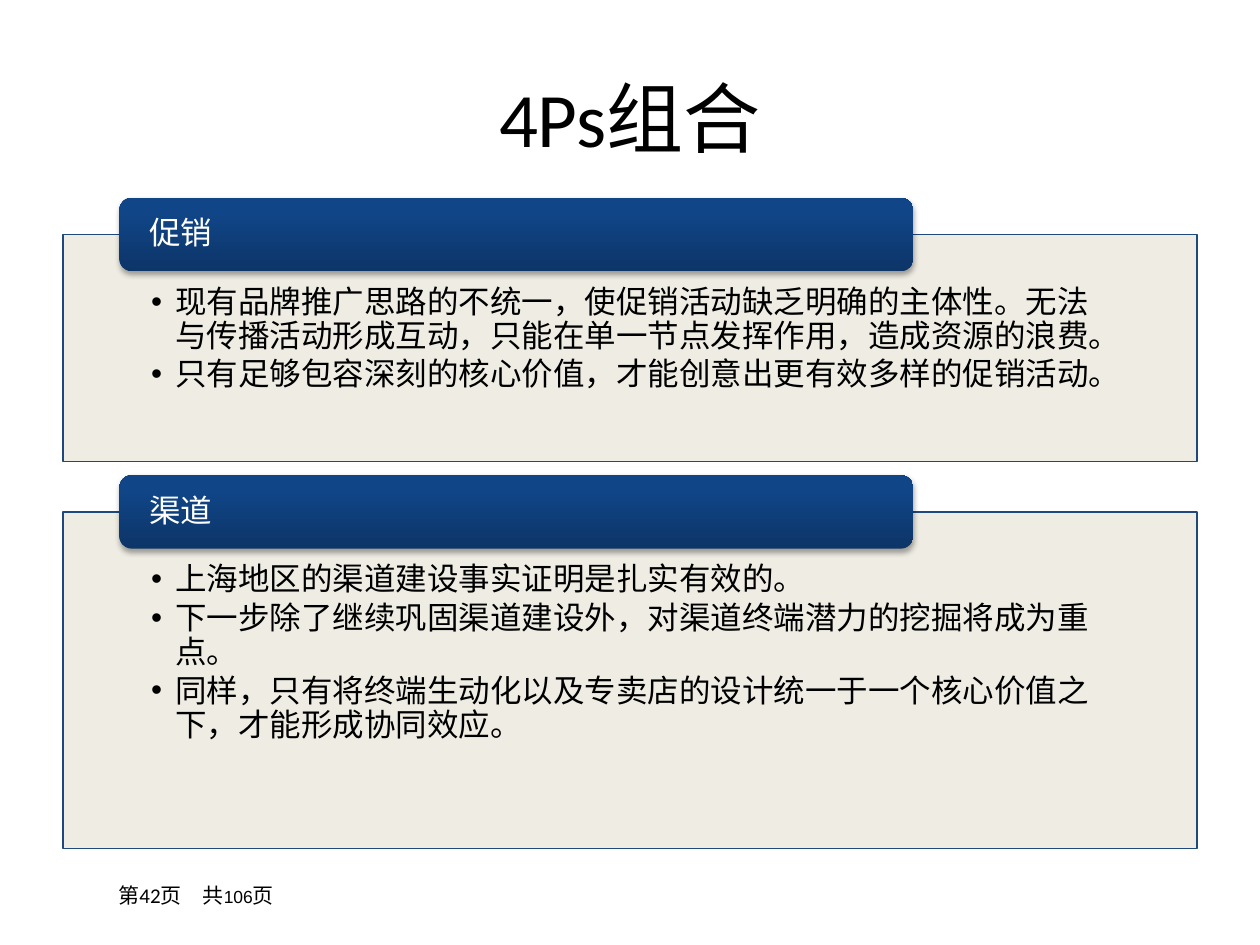
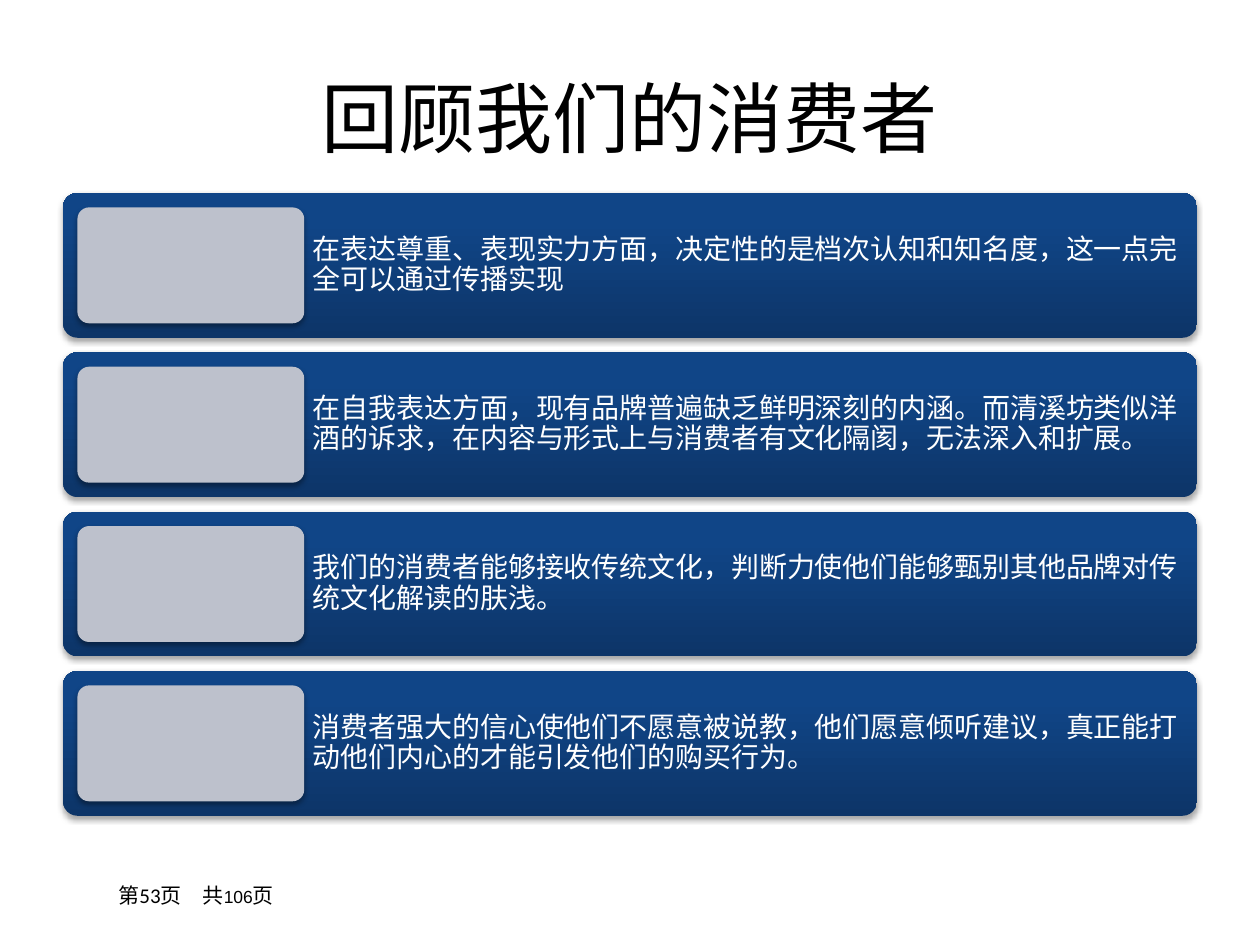
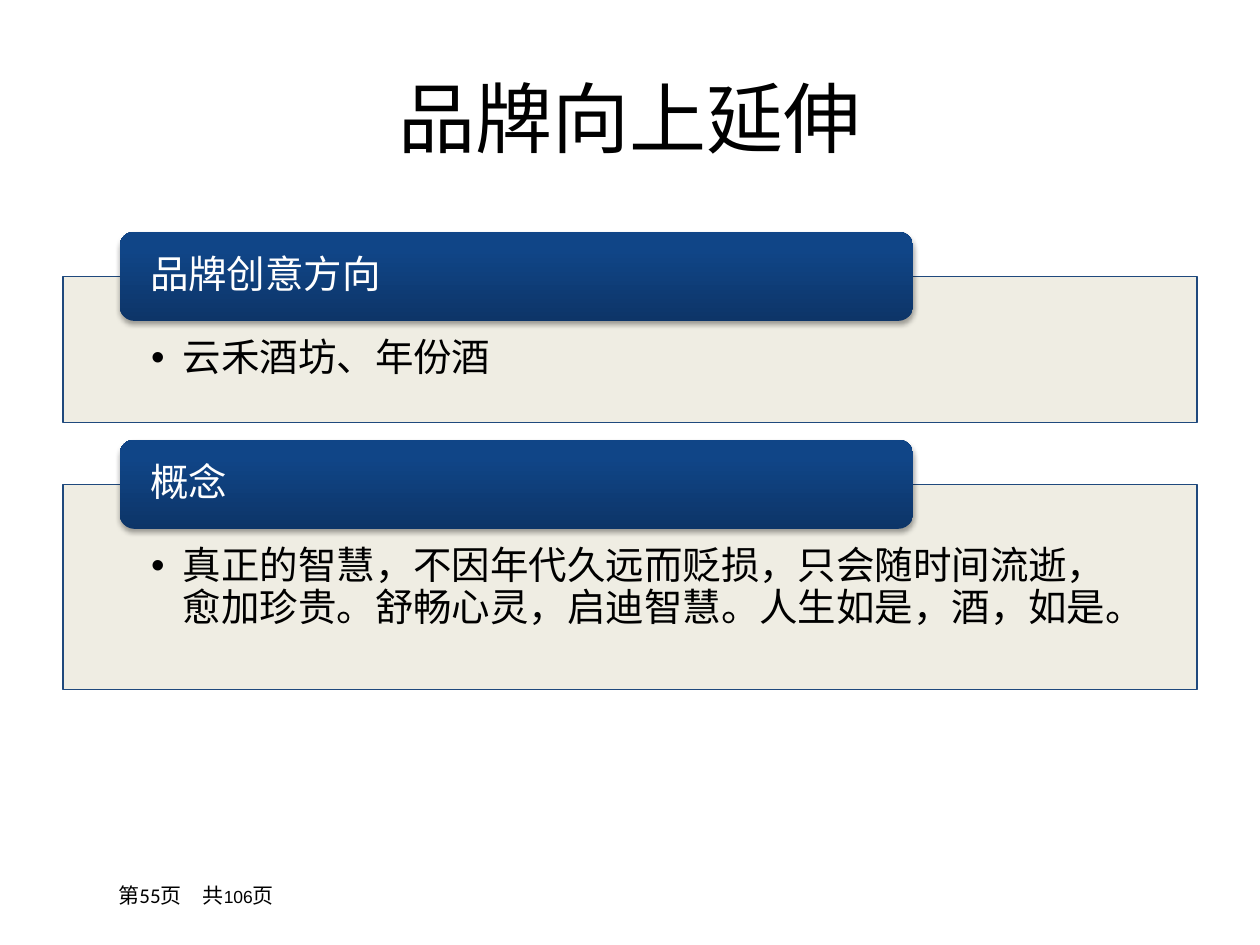
from lxml import etree
from copy import deepcopy
from pptx import Presentation
from pptx.dml.color import RGBColor
from pptx.enum.shapes import MSO_SHAPE
from pptx.enum.text import MSO_ANCHOR, PP_ALIGN
from pptx.oxml.ns import qn
from pptx.util import Cm, Pt

RECT, ROUNDED = MSO_SHAPE.RECTANGLE, MSO_SHAPE.ROUNDED_RECTANGLE
TOP, MIDDLE = MSO_ANCHOR.TOP, MSO_ANCHOR.MIDDLE
LEFT, CENTER, RIGHT = PP_ALIGN.LEFT, PP_ALIGN.CENTER, PP_ALIGN.RIGHT

# Colours
BLACK = RGBColor(0x00, 0x00, 0x00)
WHITE = RGBColor(0xFF, 0xFF, 0xFF)
CREAM = RGBColor(0xEE, 0xEC, 0xE1)
NAVY = RGBColor(0x1F, 0x49, 0x7D)
SILVER = RGBColor(0xBD, 0xC1, 0xCC)
BLUE_STOPS = [
    (0, RGBColor(0x0D, 0x35, 0x68)),
    (0.8, RGBColor(0x10, 0x45, 0x87)),
    (1, RGBColor(0x0E, 0x45, 0x8A)),
]

# Shared measures in centimetres
MARGIN, CONTENT_WIDTH = 1.27, 22.86
TOTAL_PAGES = 106


def add_xml(parent, tag, **attributes):
    """Append a DrawingML element that has no public method."""
    element = etree.SubElement(parent, qn(tag))
    for name, value in attributes.items():
        element.set(name, str(value))
    return element


class SlideBuilder:
    """Holds the deck, its style and the current slide."""

    def __init__(self):
        self.deck = Presentation()
        self.deck.slide_width, self.deck.slide_height = Cm(25.4), Cm(19.05)
        self.page = None

    def start_page(self, title, number):
        self.page = self.deck.slides.add_slide(self.deck.slide_layouts[5])
        box = self.page.shapes.title
        place = {"left": MARGIN, "top": 0.76, "width": CONTENT_WIDTH, "height": 3.18}
        for name, value in place.items():
            setattr(box, name, Cm(value))
        self.frame(box, MIDDLE)
        self.add_span(box.text_frame.paragraphs[0], title, 44, BLACK, CENTER)
        self.footer(number)

    def footer(self, number):
        box = self.page.shapes.add_textbox(Cm(0.99), Cm(17.65), Cm(4.78), Cm(0.79))
        self.frame(box, MIDDLE)
        para = box.text_frame.paragraphs[0]
        self.add_span(para, f"第{number}页　共", 12, BLACK, RIGHT)
        self.add_span(para, str(TOTAL_PAGES), 10, BLACK, RIGHT, "Arial")
        self.add_span(para, "页", 12, BLACK, RIGHT)

    def frame(self, box, anchor, **margins):
        box.text_frame.word_wrap = True
        box.text_frame.vertical_anchor = anchor
        for side, value in margins.items():
            setattr(box.text_frame, f"margin_{side}", Cm(value))

    def add_span(self, para, text, size, color, align=LEFT, font="Calibri"):
        para.alignment = align
        span = para.add_run()
        span.text = text
        for name, value in {"name": font, "size": Pt(size)}.items():
            setattr(span.font, name, value)
        span.font.color.rgb = color

    def shape(self, kind, left, top, width, height):
        shape = self.page.shapes.add_shape(kind, Cm(left), Cm(top), Cm(width), Cm(height))
        shape.shadow.inherit = False
        return shape

    def card(self, left, top, width, height, color=None, corner=None):
        """Rounded shadowed box, with the blue gradient unless a colour is given."""
        card = self.shape(ROUNDED, left, top, width, height)
        card.line.fill.background()
        if corner:
            card.adjustments[0] = corner
        if color:
            card.fill.solid()
            card.fill.fore_color.rgb = color
        else:
            self.blue_gradient(card)
        effects = card._element.spPr.find(qn("a:effectLst"))
        shadow = add_xml(effects, "a:outerShdw", blurRad=Pt(3.1), dist=Pt(1.8),
                         dir=5400000, rotWithShape=0)
        shade = add_xml(shadow, "a:srgbClr", val=BLACK)
        add_xml(shade, "a:alpha", val=35000)
        return card

    def blue_gradient(self, card):
        card.fill.gradient()
        card.fill.gradient_angle = 90
        stop_list = card._element.spPr.find(".//" + qn("a:gsLst"))
        stop_list.append(deepcopy(stop_list[-1]))
        for stop, (position, color) in zip(card.fill.gradient_stops, BLUE_STOPS):
            stop.position = position
            stop.color.rgb = color

    def bullet(self, para, text, size, indent):
        properties = para._p.get_or_add_pPr()
        properties.set("marL", str(Cm(indent)))
        properties.set("indent", str(-Cm(indent)))
        add_xml(properties, "a:buFont", typeface="Arial")
        add_xml(properties, "a:buChar", char="•")
        formats = {"line_spacing": 0.9, "space_after": Pt(size * 0.15)}
        for name, value in formats.items():
            setattr(para, name, value)
        self.add_span(para, text, size, BLACK)

    def panel(self, top, height, tab_height, items, size, indent):
        panel = self.shape(RECT, MARGIN, top, CONTENT_WIDTH, height)
        panel.fill.solid()
        panel.fill.fore_color.rgb = CREAM
        add_xml(panel._element.spPr.find(".//" + qn("a:srgbClr")), "a:alpha", val=90000)
        panel.line.color.rgb = NAVY
        panel.line.width = Pt(0.75)
        self.frame(panel, TOP, left=1.78, right=1.78,
                   top=tab_height * 0.7, bottom=tab_height * 0.24)
        for index, item in enumerate(items):
            frame = panel.text_frame
            para = frame.add_paragraph() if index else frame.paragraphs[0]
            self.bullet(para, item, size, indent)

    def tabbed_panels(self, top, tab_height, size, indent, sections):
        """Stack panels, each with a tab centred on its upper edge."""
        for heading, height, items in sections:
            panel_top = top + tab_height / 2
            self.panel(panel_top, height, tab_height, items, size, indent)
            tab = self.card(2.41, top, 16, tab_height)
            self.frame(tab, MIDDLE, left=0.53, right=0.53, top=0, bottom=0)
            para = tab.text_frame.paragraphs[0]
            para.line_spacing = 0.9
            self.add_span(para, heading, size, WHITE)
            top = panel_top + height + tab_height * 0.19

    def insight_rows(self, top, height, texts):
        """Equal blue rows, each with a silver tile at its left."""
        inset, tile_width = height * 0.1, CONTENT_WIDTH * 0.2
        for index, text in enumerate(texts):
            row_top = top + index * height * 1.1
            row = self.card(MARGIN, row_top, CONTENT_WIDTH, height, corner=0.1)
            self.frame(row, MIDDLE, left=inset + tile_width + 0.09, right=0.09,
                       top=0.09, bottom=0.09)
            para = row.text_frame.paragraphs[0]
            para.line_spacing = 0.9
            self.add_span(para, text, 16, WHITE)
            self.card(MARGIN + inset, row_top + inset, tile_width, height * 0.8,
                      SILVER, 0.1)


def main():
    builder = SlideBuilder()

    # Marketing mix
    builder.start_page("4Ps组合", 42)
    builder.tabbed_panels(3.99, 1.48, 18, 0.48, [
        ("促销", 4.57, [
            "现有品牌推广思路的不统一，使促销活动缺乏明确的主体性。无法与传播活动形成互动，只能在单一节点发挥作用，造成资源的浪费。",
            "只有足够包容深刻的核心价值，才能创意出更有效多样的促销活动。",
        ]),
        ("渠道", 6.78, [
            "上海地区的渠道建设事实证明是扎实有效的。",
            "下一步除了继续巩固渠道建设外，对渠道终端潜力的挖掘将成为重点。",
            "同样，只有将终端生动化以及专卖店的设计统一于一个核心价值之下，才能形成协同效应。",
        ]),
    ])

    # Consumer review
    builder.start_page("回顾我们的消费者", 53)
    builder.insight_rows(3.89, 2.92, [
        "在表达尊重、表现实力方面，决定性的是档次认知和知名度，这一点完全可以通过传播实现",
        "在自我表达方面，现有品牌普遍缺乏鲜明深刻的内涵。而清溪坊类似洋酒的诉求，在内容与形式上与消费者有文化隔阂，无法深入和扩展。",
        "我们的消费者能够接收传统文化，判断力使他们能够甄别其他品牌对传统文化解读的肤浅。",
        "消费者强大的信心使他们不愿意被说教，他们愿意倾听建议，真正能打动他们内心的才能引发他们的购买行为。",
    ])

    # Brand extension
    builder.start_page("品牌向上延伸", 55)
    builder.tabbed_panels(4.67, 1.8, 22, 0.64, [
        ("品牌创意方向", 2.95, ["云禾酒坊、年份酒"]),
        ("概念", 4.14, [
            "真正的智慧，不因年代久远而贬损，只会随时间流逝，愈加珍贵。舒畅心灵，启迪智慧。人生如是，酒，如是。",
        ]),
    ])

    builder.deck.save("out.pptx")


if __name__ == "__main__":
    main()
